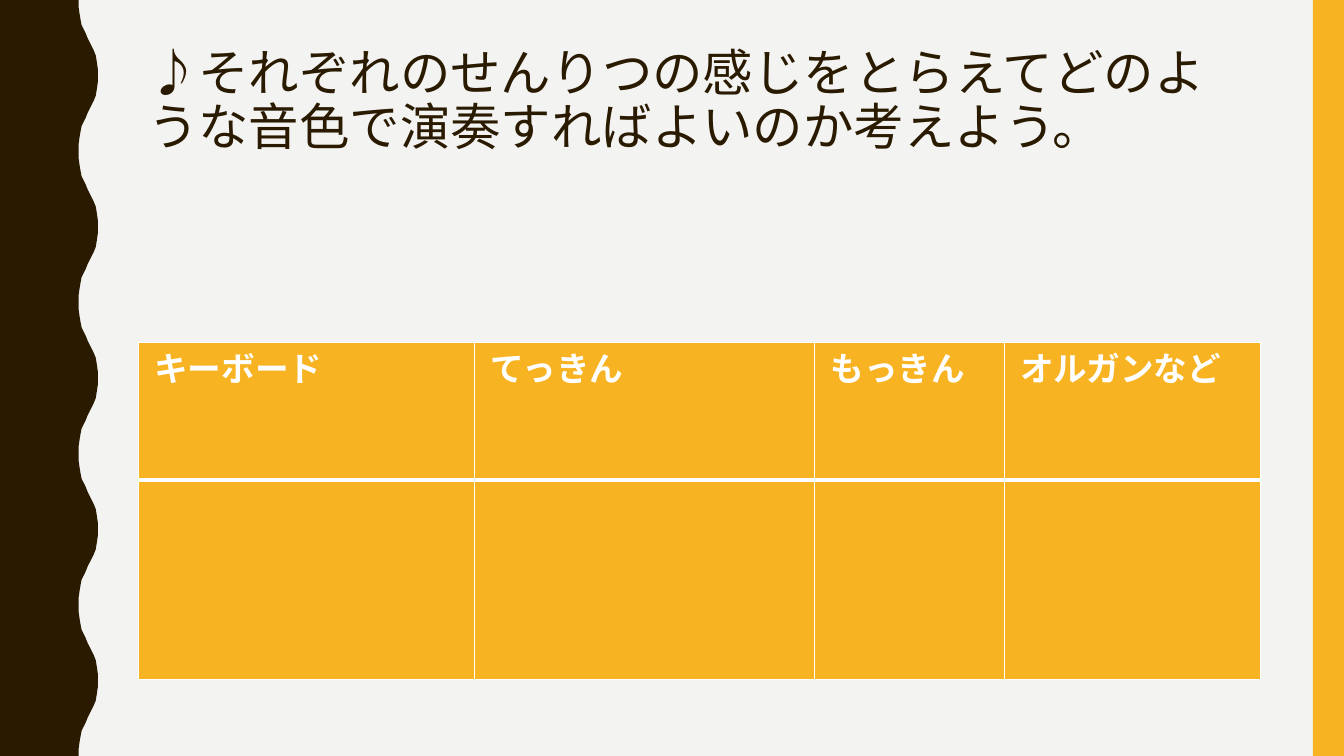
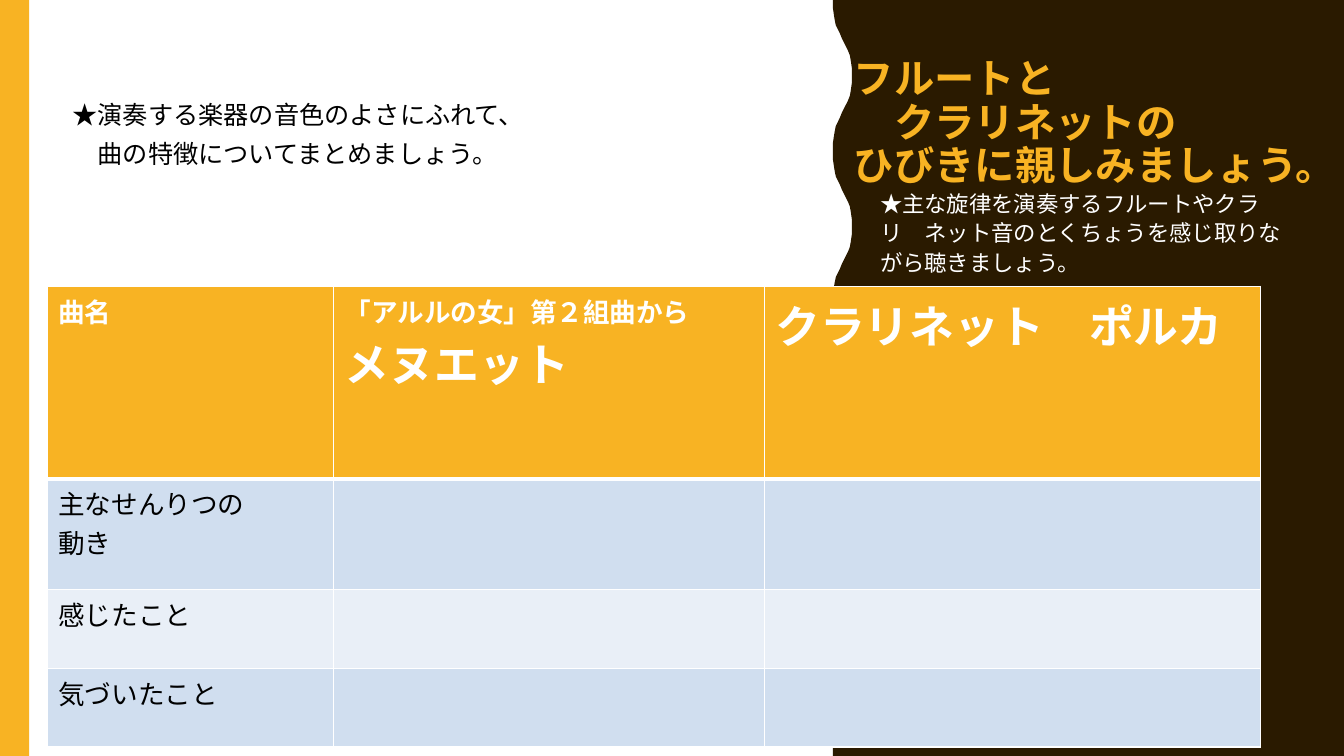
"""Build two music lesson slides with wavy bands and worksheet tables."""
import lxml.etree
import pptx
import pptx.dml.color
import pptx.enum.shapes
import pptx.enum.text
import pptx.oxml.ns
import pptx.util

Inches = pptx.util.Inches
Pt = pptx.util.Pt
RGB = pptx.dml.color.RGBColor
Align = pptx.enum.text.PP_ALIGN
Anchor = pptx.enum.text.MSO_ANCHOR
qn = pptx.oxml.ns.qn

BROWN = RGB(0x2A, 0x1A, 0x00)
GOLD = RGB(0xF8, 0xB3, 0x23)
PAPER = RGB(0xF3, 0xF3, 0xF2)
WHITE = RGB(0xFF, 0xFF, 0xFF)
BLACK = RGB(0x00, 0x00, 0x00)
BLUE = RGB(0xD0, 0xDE, 0xEF)
PALE = RGB(0xE9, 0xEF, 0xF7)
LATIN, ASIAN = "Arial", "Noto Sans CJK JP"
WIDE, HIGH = 13.33, 7.5

PERIOD = 1.5
CURVE = [(0, 0), (0, 0.07), (0.01, 0.14), (0.02, 0.2), (0.03, 0.25),
         (0.05, 0.29), (0.07, 0.33), (0.09, 0.38), (0.11, 0.42),
         (0.13, 0.46), (0.15, 0.5), (0.17, 0.55), (0.18, 0.61),
         (0.19, 0.68), (0.19, 0.75)]

TASK = ["♪それぞれのせんりつの感じをとらえてどのような音色で演奏すればよいのか考えよう。"]
TOOLS = {
    "at": (1.37, 3.4), "cols": [3.34, 3.37, 1.88, 2.54], "rows": [1.36, 1.98],
    "fills": [GOLD, GOLD], "pad": (0.16, 0), "align": Align.JUSTIFY,
    "cells": [[[("キーボード", 24)], [("てっきん", 24)],
               [("もっきん", 24)], [("オルガンなど", 24)]]],
}

THEME = ["フルートと", "　クラリネットの", "ひびきに親しみましょう。"]
GUIDE = ["★主な旋律を演奏するフルートやクラリ　ネット音のとくちょうを感じ取りながら聴きましょう。"]
NOTE = ["★演奏する楽器の音色のよさにふれて、", "　曲の特徴についてまとめましょう。"]
TUNES = {
    "at": (0.47, 2.84), "cols": [2.84, 4.27, 4.92],
    "rows": [1.91, 1.1, 0.78, 0.78],
    "fills": [GOLD, BLUE, PALE, BLUE], "pad": (0.11, 0.05), "align": Align.LEFT,
    "cells": [
        [[("曲名", 19)],
         [("「アルルの女」第２組曲から", 19), ("メヌエット", 32)],
         [("クラリネット　ポルカ", 32)]],
        [[("主なせんりつの", 19), ("動き", 19)]],
        [[("感じたこと", 19)]],
        [[("気づいたこと", 19)]],
    ],
}


def style(para, size, color, bold=False, face=LATIN):
    for run in para.runs:
        font = run.font
        font.size, font.bold, font.name = Pt(size), bold, face
        font.color.rgb = color
        east = lxml.etree.SubElement(font._element, qn("a:ea"))
        east.set("typeface", ASIAN)


def paint(shape, color):
    shape.shadow.inherit = False
    shape.fill.solid()
    shape.fill.fore_color.rgb = color
    shape.line.fill.background()


def start(deck, color):
    slide = deck.slides.add_slide(deck.slide_layouts[6])
    slide.background.fill.solid()
    slide.background.fill.fore_color.rgb = color
    return slide


def stripe(slide, left, width):
    kind = pptx.enum.shapes.MSO_SHAPE.RECTANGLE
    paint(slide.shapes.add_shape(kind, Inches(left), 0, Inches(width), Inches(HIGH)), GOLD)


def wave(slide, edge, side):
    cycle = CURVE + [(dx, PERIOD - dy) for dx, dy in CURVE[-2::-1]]
    turns = round(HIGH / PERIOD)
    points = [(edge + dx, turn * PERIOD + dy) for turn in range(turns) for dx, dy in cycle]
    points += [(side, HIGH), (side, 0)]
    path = slide.shapes.build_freeform(Inches(edge), 0)
    path.add_line_segments([(Inches(x), Inches(y)) for x, y in points], close=True)
    paint(path.convert_to_shape(), BROWN)


def write(slide, at, lines, size, color, pitch, gap=0, bold=False,
          face=LATIN, anchor=Anchor.TOP):
    frame = slide.shapes.add_textbox(*map(Inches, at)).text_frame
    frame.word_wrap = True
    frame.vertical_anchor = anchor
    frame.text = "\n".join(lines)
    for spot, para in enumerate(frame.paragraphs):
        para.line_spacing = Pt(pitch)
        para.space_before = Pt(gap if spot else 0)
        style(para, size, color, bold, face)


def border(cell, sides):
    props = cell._tc.get_or_add_tcPr()
    for spot, (side, width) in enumerate(sides.items()):
        line = lxml.etree.Element(qn("a:ln" + side), w=str(Pt(width)))
        fill = lxml.etree.SubElement(line, qn("a:solidFill"))
        lxml.etree.SubElement(fill, qn("a:srgbClr"), val=str(WHITE))
        props.insert(spot, line)


def grid(slide, data):
    cols, rows = data["cols"], data["rows"]
    size = (sum(cols), sum(rows))
    table = slide.shapes.add_table(len(rows), len(cols), *map(Inches, data["at"] + size)).table
    for col, width in zip(table.columns, cols):
        col.width = Inches(width)
    for row, height in enumerate(rows):
        table.rows[row].height = Inches(height)
        texts = data["cells"][row] if row < len(data["cells"]) else []
        for col in range(len(cols)):
            cell = table.cell(row, col)
            cell.fill.solid()
            cell.fill.fore_color.rgb = data["fills"][row]
            cell.margin_left = cell.margin_right = Inches(data["pad"][0])
            cell.margin_top = cell.margin_bottom = Inches(data["pad"][1])
            border(cell, {"L": 1, "R": 1, "T": 3 if row == 1 else 1, "B": 3 if row == 0 else 1})
            if col < len(texts):
                lines = texts[col]
                cell.text_frame.text = "\n".join(text for text, _ in lines)
                for para, (_, points) in zip(cell.text_frame.paragraphs, lines):
                    para.alignment = data["align"]
                    style(para, points, BLACK if row else WHITE, row == 0)


def main():
    deck = pptx.Presentation()
    deck.slide_width, deck.slide_height = Inches(WIDE), Inches(HIGH)

    slide = start(deck, PAPER)
    wave(slide, 0.78, 0)
    stripe(slide, 13.02, 0.31)
    write(slide, (1.37, 0.42, 11.13, 1.63), TASK, 36, BROWN, 38.6)
    grid(slide, TOOLS)

    slide = start(deck, WHITE)
    stripe(slide, 0, 0.29)
    wave(slide, 8.26, WIDE)
    write(slide, (8.37, 0.26, 5.08, 1.66), THEME, 28.8, GOLD, 31,
          bold=True, anchor=Anchor.BOTTOM)
    write(slide, (8.63, 1.81, 4.24, 1.31), GUIDE, 16, WHITE, 21)
    write(slide, (0.62, 0.99, 12.25, 0.66), NOTE, 18, BLACK, 17.9, gap=10, face=ASIAN)
    grid(slide, TUNES)

    deck.save("out.pptx")


if __name__ == "__main__":
    main()
